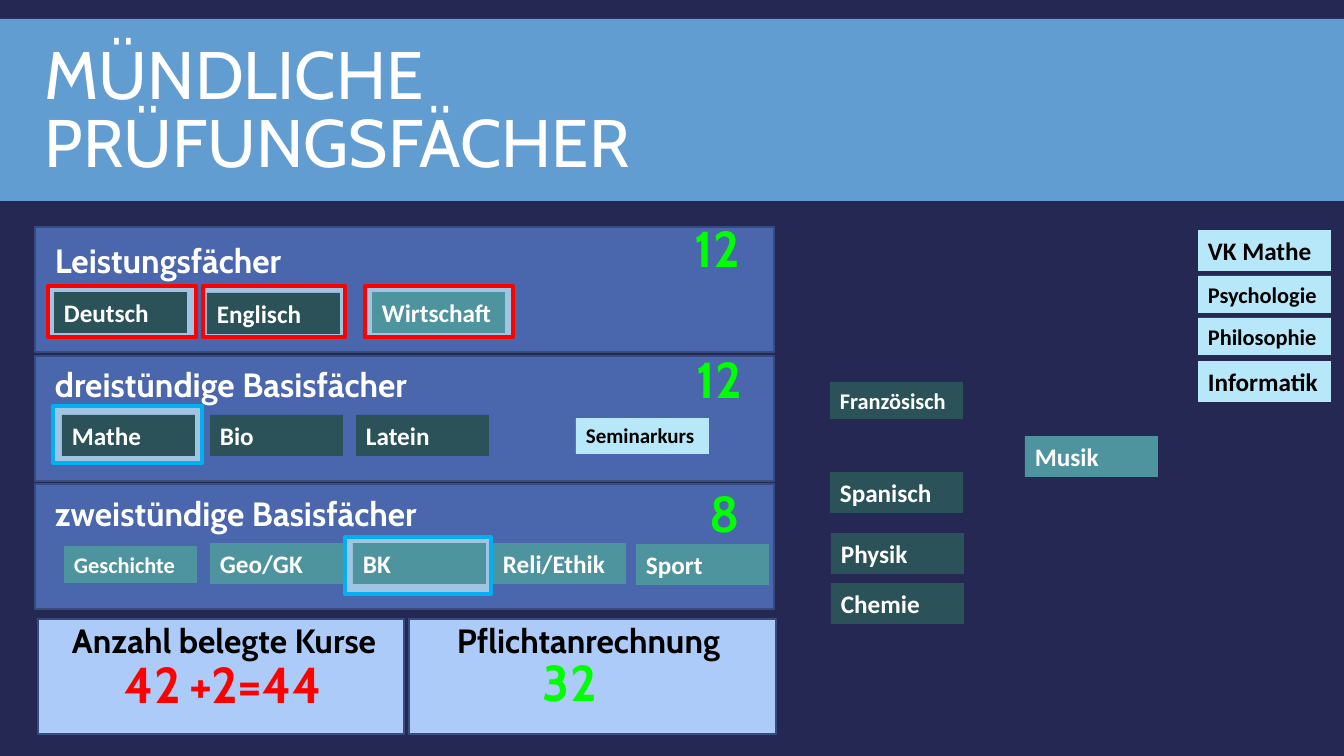
from pptx import Presentation
from pptx.dml.color import RGBColor
from pptx.enum.shapes import MSO_SHAPE as Kind
from pptx.enum.text import MSO_ANCHOR as Anchor, MSO_AUTO_SIZE as Auto, PP_ALIGN as Align
from pptx.util import Emu, Pt

PX = 914400 / 100.8
WHITE, BLACK, RED, GREEN, CYAN = "FFFFFF", "000000", "FF0000", "00FF00", "00B0F0"
DARK, TEAL, PALE = "2B5259", "4E949F", "B7E8F9"
EDGE = "374B7F"

TITLE = "MÜNDLICHE PRÜFUNGSFÄCHER"
PANELS = [
    ("Leistungsfächer", 227, 235, 254),
    ("dreistündige Basisfächer", 356, 359, 384),
    ("zweistündige Basisfächer", 484, 488, 394),
]
FRAMES = [
    (345, 537, 146, 57, CYAN),
    (365, 286, 148, 51, RED),
    (203, 286, 142, 51, RED),
    (48, 286, 148, 51, RED),
    (53, 406, 149, 57, CYAN),
]
TAGS = {
    DARK: [
        ("Mathe", 62, 415, 18), ("Deutsch", 54, 292, 18),
        ("Französisch", 830, 382, 16), ("Englisch", 207, 293, 18),
        ("Latein", 356, 415, 18), ("Spanisch", 830, 472, 18),
        ("Physik", 831, 533, 18), ("Chemie", 831, 583, 18),
        ("Bio", 210, 415, 18),
    ],
    TEAL: [
        ("Wirtschaft", 372, 292, 18), ("Geschichte", 64, 546, 16),
        ("Geo/GK", 210, 543, 18), ("BK", 353, 543, 18),
        ("Musik", 1025, 436, 18), ("Reli/Ethik", 493, 543, 18),
        ("Sport", 636, 544, 18),
    ],
    PALE: [
        ("Psychologie", 1198, 276, 16), ("Informatik", 1198, 361, 18),
        ("Philosophie", 1198, 318, 16), ("VK Mathe", 1198, 230, 18),
        ("Seminarkurs", 576, 418, 15),
    ],
}
TALL = {18: 41, 16: 37, 15: 36}
TOTALS = [
    ("Anzahl belegte Kurse", 38, 366, 62, 331),
    ("Pflichtanrechnung", 409, 367, 447, 290),
]
COUNTS = [
    ("42", 115, 648, 77, RED),
    ("+2=44", 180, 648, 186, RED),
    ("12", 685, 212, 77, GREEN),
    ("12", 687, 343, 77, GREEN),
    ("8", 700, 477, 77, GREEN),
    ("32", 533, 646, 77, GREEN),
]


def px(n):
    return Emu(round(n * PX))


def rgb(code):
    return RGBColor.from_string(code)


def box(x, y, w, h, fill, line=None, thick=1):
    shape = slide.shapes.add_shape(Kind.RECTANGLE, px(x), px(y), px(w), px(h))
    shape.shadow.inherit = False
    shape.fill.solid()
    shape.fill.fore_color.rgb = rgb(fill)
    if line:
        shape.line.color.rgb = rgb(line)
        shape.line.width = Pt(thick)
    else:
        shape.line.fill.background()
    return shape


def write(text, x, y, w, h, size=24, color=WHITE, font="Cabin", bold=True,
          wrap=True, fill=None, anchor=Anchor.TOP, space=None, fit=Auto.SHAPE_TO_FIT_TEXT):
    if fill:
        shape = box(x, y, w, h, fill)
    else:
        shape = slide.shapes.add_textbox(px(x), px(y), px(w), px(h))
    frame = shape.text_frame
    frame.word_wrap = wrap
    frame.auto_size = fit
    frame.vertical_anchor = anchor
    para = frame.paragraphs[0]
    para.alignment = Align.LEFT
    if space:
        para.line_spacing = space
    run = para.add_run()
    run.text = text
    run.font.name = font
    run.font.size = Pt(size)
    run.font.bold = bold
    run.font.color.rgb = rgb(color)


deck = Presentation()
deck.slide_width, deck.slide_height = px(1344), px(756)
slide = deck.slides.add_slide(deck.slide_layouts[6])
slide.background.fill.solid()
slide.background.fill.fore_color.rgb = rgb("242852")

box(0, 19, 1344, 182, "629DD1")
for name, top, head, wide in PANELS:
    box(35, top, 739, 125, "4A66AC", EDGE)
    write(name, 45, head, wide, 50, wrap=False)
for x, y, w, h, line in FRAMES:
    box(x, y, w, h, "A1C4E3", line, 3)
write(TITLE, 35, 30, 982, 166, size=48, bold=False, anchor=Anchor.MIDDLE,
      space=0.85, fit=Auto.NONE)
for fill, tags in TAGS.items():
    for name, x, y, size in tags:
        write(name, x, y, 133, TALL[size], size=size, font="Calibri", fill=fill,
              color=BLACK if fill == PALE else WHITE)
for name, x, w, left, wide in TOTALS:
    box(x, 619, w, 115, "ACCBF9", EDGE)
    write(name, left, 615, wide, 50, color=BLACK, wrap=False)
for text, x, y, w, color in COUNTS:
    write(text, x, y, w, 72, size=36, color=color)

deck.save("out.pptx")
